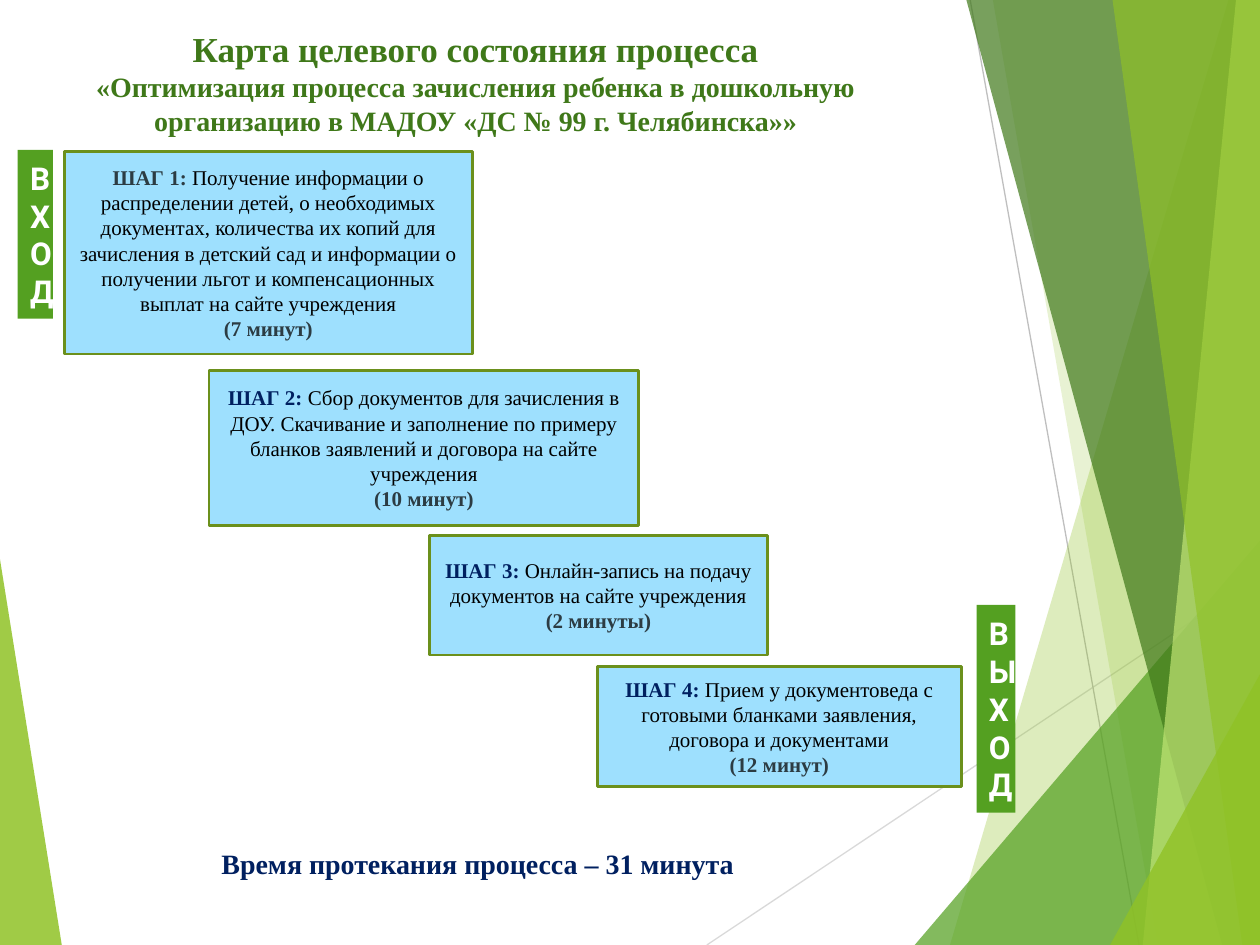
from collections import namedtuple
from dataclasses import dataclass

from lxml import etree
from pptx import Presentation
from pptx import util as u
from pptx.dml.color import RGBColor
from pptx.enum import shapes, text
from pptx.oxml.ns import qn

COLS, ROWS = 100, 75
CELL = u.Inches(0.1)
Box = namedtuple("Box", "x y w h")


@dataclass(frozen=True)
class Theme:
    serif: str = "Times New Roman"
    sans: str = "Roboto"
    lime: str = "90C226"
    green: str = "54A021"
    forest: str = "3F7819"
    pale_lime: str = "C0E474"
    navy: str = "002060"
    slate: str = "2C3C43"
    black: str = "000000"
    white: str = "FFFFFF"
    step_fill: str = "9EE0FE"
    step_line: str = "6B901C"
    heading: int = 20
    subheading: int = 16
    banner: int = 18
    body: int = 12


T = Theme()

STEPS = [
    (Box(5.1, 12, 32.4, 16.1), T.slate,
     "Получение информации о распределении детей, о необходимых документах, "
     "количества их копий для зачисления в детский сад и информации о получении "
     "льгот и компенсационных выплат на сайте учреждения", "7 минут"),
    (Box(16.6, 29.4, 34.1, 12.3), T.navy,
     "Сбор документов для зачисления в ДОУ. Скачивание и заполнение по примеру "
     "бланков заявлений и договора на сайте учреждения", "10 минут"),
    (Box(34.1, 42.5, 26.8, 9.5), T.navy,
     "Онлайн-запись на подачу документов на сайте учреждения", "2 минуты"),
    (Box(47.4, 52.9, 28.9, 9.5), T.navy,
     "Прием у документоведа с готовыми бланками заявления, договора и документами",
     "12 минут"),
]


def cells(*values):
    return [round(v * CELL) for v in values]


def rgb(value):
    return RGBColor.from_string(value)


def set_font(font, size, color, name=T.serif, bold=True):
    font.name, font.size, font.bold = name, u.Pt(size), bold
    font.color.rgb = rgb(color)


def add_facet(s, box, points, color, opacity):
    """Translucent polygon; points are in cells from the box corner."""
    (x, y), *rest = [cells(box.x + px, box.y + py) for px, py in points]
    builder = s.shapes.build_freeform(x, y)
    builder.add_line_segments(rest, close=True)
    sp = builder.convert_to_shape()
    sp.shadow.inherit = False
    sp.fill.solid()
    sp.fill.fore_color.rgb = rgb(color)
    sp.line.fill.background()
    clr = sp.fill._xPr.find(".//" + qn("a:srgbClr"))
    etree.SubElement(clr, qn("a:alpha")).set("val", str(opacity * 1000))


def add_hairline(s, box, start, end, color):
    ends = cells(box.x + start[0], box.y + start[1], box.x + end[0], box.y + end[1])
    line = s.shapes.add_connector(shapes.MSO_CONNECTOR.STRAIGHT, *ends)
    line.line.color.rgb = rgb(color)
    line.line.width = u.Pt(0.75)
    etree.SubElement(line._element.spPr, qn("a:effectLst"))


def add_left_wedge(s, box):
    add_facet(s, box, [(0, 0), (box.w, box.h), (0, box.h)], T.lime, 85)


def add_right_facets(s, box):
    """Each facet runs from its slanted left edge to the right side of the box."""
    add_hairline(s, box, (0, box.h), (box.w, 45.7), "D9D9D9")
    add_hairline(s, box, (20.9, 0), (34.3, box.h), "BFBFBF")
    facets = [  # top x, top y, bottom x, colour, opacity
        (41.4, 0, 19.3, T.lime, 30),
        (22.7, 0, 35.8, T.lime, 20),
        (box.w, 42.9, 16.5, T.green, 72),
        (20.6, 0, 40.9, T.forest, 70),
        (42, 0, 34.6, T.pale_lime, 70),
        (32.2, 0, 42.5, T.lime, 65),
        (box.w, 53.5, 32, T.lime, 80),
    ]
    for top_x, top_y, bottom_x, color, opacity in facets:
        points = [(top_x, top_y), (bottom_x, box.h), (box.w, box.h), (box.w, top_y)]
        add_facet(s, box, points, color, opacity)


def add_panel(s, box, fill, line=None):
    sp = s.shapes.add_shape(shapes.MSO_SHAPE.RECTANGLE, *cells(*box))
    sp.shadow.inherit = False
    sp.fill.solid()
    sp.fill.fore_color.rgb = rgb(fill)
    if line:
        sp.line.color.rgb = rgb(line)
        sp.line.width = u.Pt(1.5)
    else:
        sp.line.fill.background()
    tf = sp.text_frame
    tf.word_wrap = True
    tf.vertical_anchor = text.MSO_ANCHOR.MIDDLE
    return tf


def add_banner(s, box, word):
    """Narrow panel whose word wraps to one letter a line."""
    p = add_panel(s, box, T.green).paragraphs[0]
    p.text = word
    p.alignment = text.PP_ALIGN.CENTER
    set_font(p.font, T.banner, T.white, T.sans)


def add_step(s, box, number, label_color, action, duration):
    tf = add_panel(s, box, T.step_fill, T.step_line)
    p = tf.paragraphs[0]
    p.alignment = text.PP_ALIGN.CENTER
    for words, color, bold in ((f"ШАГ {number}: ", label_color, True),
                               (action, T.black, False)):
        r = p.add_run()
        r.text = words
        set_font(r.font, T.body, color, bold=bold)
    p = tf.add_paragraph()
    p.text = f"({duration})"
    p.alignment = text.PP_ALIGN.CENTER
    set_font(p.font, T.body, T.slate)


def add_caption(s, box, lines, color, align):
    tf = s.shapes.add_textbox(*cells(*box)).text_frame
    tf.word_wrap = True
    for i, (words, size) in enumerate(lines):
        p = tf.add_paragraph() if i else tf.paragraphs[0]
        p.text = words
        p.alignment = align
        set_font(p.font, size, color)


def main():
    prs = Presentation()
    prs.slide_width, prs.slide_height = cells(COLS, ROWS)
    s = prs.slides.add_slide(prs.slide_layouts[6])

    add_left_wedge(s, Box(0, 44.4, 4.9, 30.6))
    add_right_facets(s, Box(56.1, 0, 43.9, ROWS))
    add_caption(s, Box(16.6, 66.7, 51.6, 3.7),
                [("Время протекания процесса – 31 минута", T.subheading)],
                T.navy, text.PP_ALIGN.LEFT)
    add_banner(s, Box(77.5, 48, 3.1, 16.5), "ВЫХОД")
    add_banner(s, Box(1.4, 11.9, 2.8, 13.4), "ВХОД")
    for number, (box, *content) in enumerate(STEPS, 1):
        add_step(s, box, number, *content)
    add_caption(s, Box(1.4, 1.7, 72.7, 9.8),
                [("Карта целевого состояния процесса", T.heading),
                 ("«Оптимизация процесса зачисления ребенка в дошкольную "
                  "организацию в МАДОУ «ДС № 99 г. Челябинска»»", T.subheading)],
                T.forest, text.PP_ALIGN.CENTER)
    prs.save("out.pptx")


if __name__ == "__main__":
    main()
